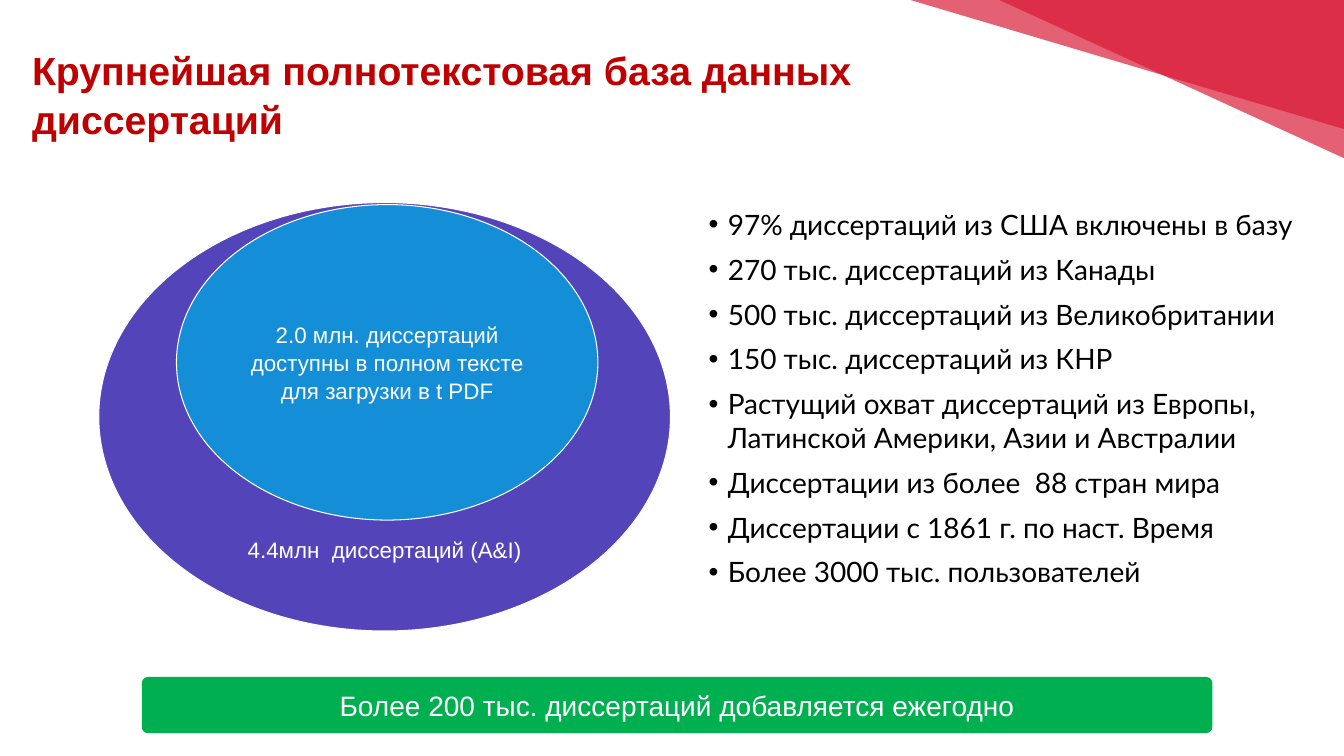
from lxml.etree import SubElement
from pptx import Presentation
from pptx.dml.color import RGBColor
from pptx.enum.shapes import MSO_SHAPE
from pptx.enum.text import MSO_ANCHOR, PP_ALIGN
from pptx.oxml.ns import qn
from pptx.util import Inches, Pt


def draw(kind, box, fill, line=None, width=0.75):
    shape = slide.shapes.add_shape(kind, *map(Inches, box))
    shape.shadow.inherit = False
    shape.fill.solid()
    shape.fill.fore_color.rgb = RGBColor.from_string(fill)
    if line:
        shape.line.color.rgb = RGBColor.from_string(line)
        shape.line.width = Pt(width)
    else:
        shape.line.fill.background()
    return shape


def style(para, text, size, color, name="Arial", bold=False):
    para.text = text
    para.font.size = Pt(size)
    para.font.name = name
    para.font.bold = bold
    para.font.color.rgb = RGBColor.from_string(color)


prs = Presentation()
prs.slide_width = Inches(13.33)
prs.slide_height = Inches(7.5)
slide = prs.slides.add_slide(prs.slide_layouts[6])

for width, height in [(3.42, 1.57), (4.3, 1.28)]:
    corner = draw(MSO_SHAPE.RIGHT_TRIANGLE, (13.33 - width, 0, width, height), "D91935")
    frame = corner._element.spPr.find(qn("a:xfrm"))
    frame.set("flipH", "1")
    frame.set("flipV", "1")
    color = corner._element.spPr.find(qn("a:solidFill"))[0]
    SubElement(color, qn("a:alpha")).set("val", "69000")

title = slide.shapes.add_textbox(Inches(0.22), Inches(0.3), Inches(10.78), Inches(1.25)).text_frame
title.word_wrap = True
title.vertical_anchor = MSO_ANCHOR.MIDDLE
title.paragraphs[0].line_spacing = 1.04
style(title.paragraphs[0], "Крупнейшая полнотекстовая база данных диссертаций", 28, "C00000", bold=True)

total = draw(MSO_SHAPE.OVAL, (0.98, 2.01, 5.67, 4.25), "5444B9", "FFFFFF")
full = draw(MSO_SHAPE.OVAL, (1.75, 2.03, 4.18, 3.13), "148ED7", "FFFFFF")
banner = draw(MSO_SHAPE.ROUNDED_RECTANGLE, (1.42, 6.73, 10.59, 0.53), "00B050", "00B050", 2)
banner.adjustments[0] = 0.09

labels = [
    (total, "4.4млн  диссертаций (A&I)", 16, MSO_ANCHOR.BOTTOM),
    (full, "2.0 млн. диссертаций доступны в полном текстe для загрузки в t PDF", 16, MSO_ANCHOR.MIDDLE),
    (banner, "Более 200 тыс. диссертаций добавляется ежегодно", 20, MSO_ANCHOR.MIDDLE),
]
for shape, text, size, anchor in labels:
    frame = shape.text_frame
    frame.word_wrap = True
    frame.vertical_anchor = anchor
    para = frame.paragraphs[0]
    para.alignment = PP_ALIGN.CENTER
    para.line_spacing = 1.04
    style(para, text, size, "FFFFFF")

facts = [
    "97% диссертаций из США включены в базу",
    "270 тыс. диссертаций из Канады",
    "500 тыс. диссертаций из Великобритании",
    "150 тыс. диссертаций из КНР",
    "Растущий охват диссертаций из Европы, Латинской Америки, Азии и Австралии",
    "Диссертации из более  88 стран мира",
    "Диссертации с 1861 г. по наст. Время",
    "Более 3000 тыс. пользователей",
]
body = slide.shapes.add_textbox(Inches(6.93), Inches(2.01), Inches(6.4), Inches(4.11)).text_frame
body.word_wrap = True
for index, fact in enumerate(facts):
    para = body.add_paragraph() if index else body.paragraphs[0]
    props = para._p.get_or_add_pPr()
    props.set("marL", str(Inches(0.19)))
    props.set("indent", str(-Inches(0.19)))
    SubElement(props, qn("a:buFont")).set("typeface", "Arial")
    SubElement(props, qn("a:buChar")).set("char", "•")
    if index:
        para.space_before = Pt(8)
    style(para, fact, 20, "000000", "Lato")

prs.save("out.pptx")
